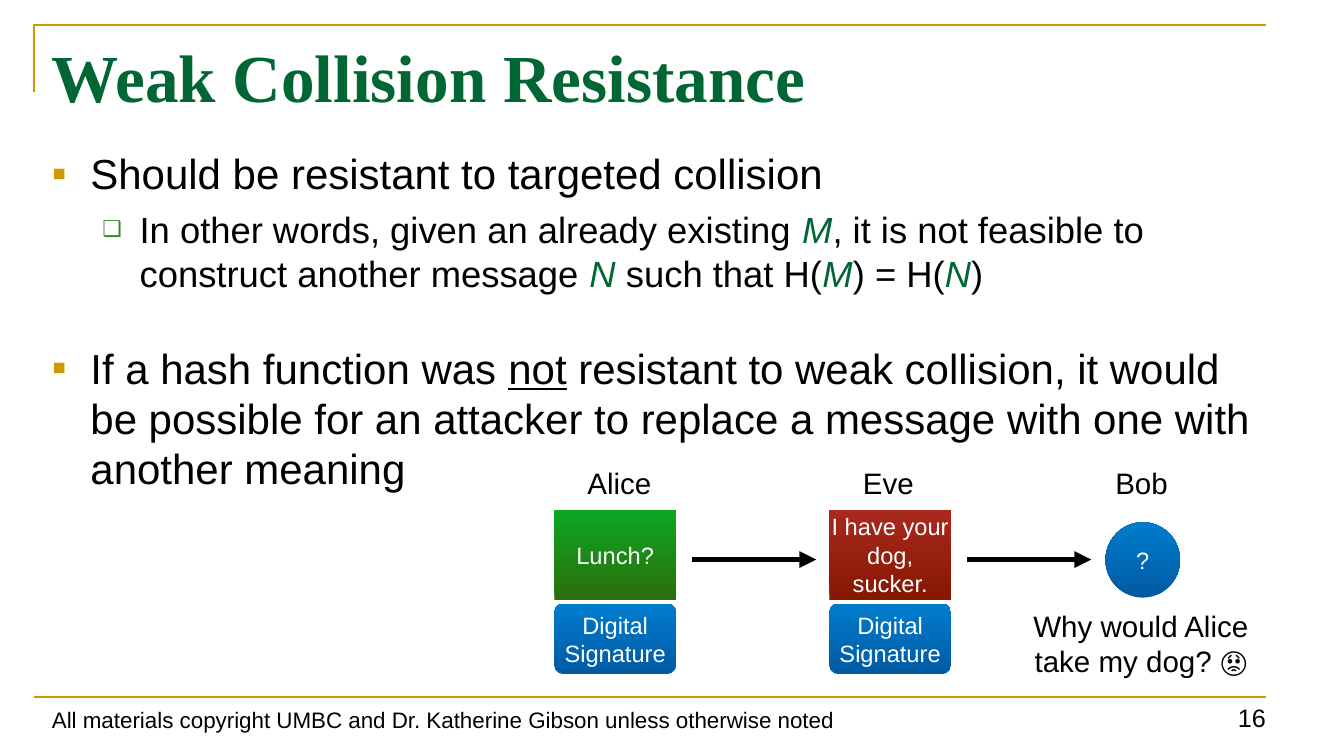
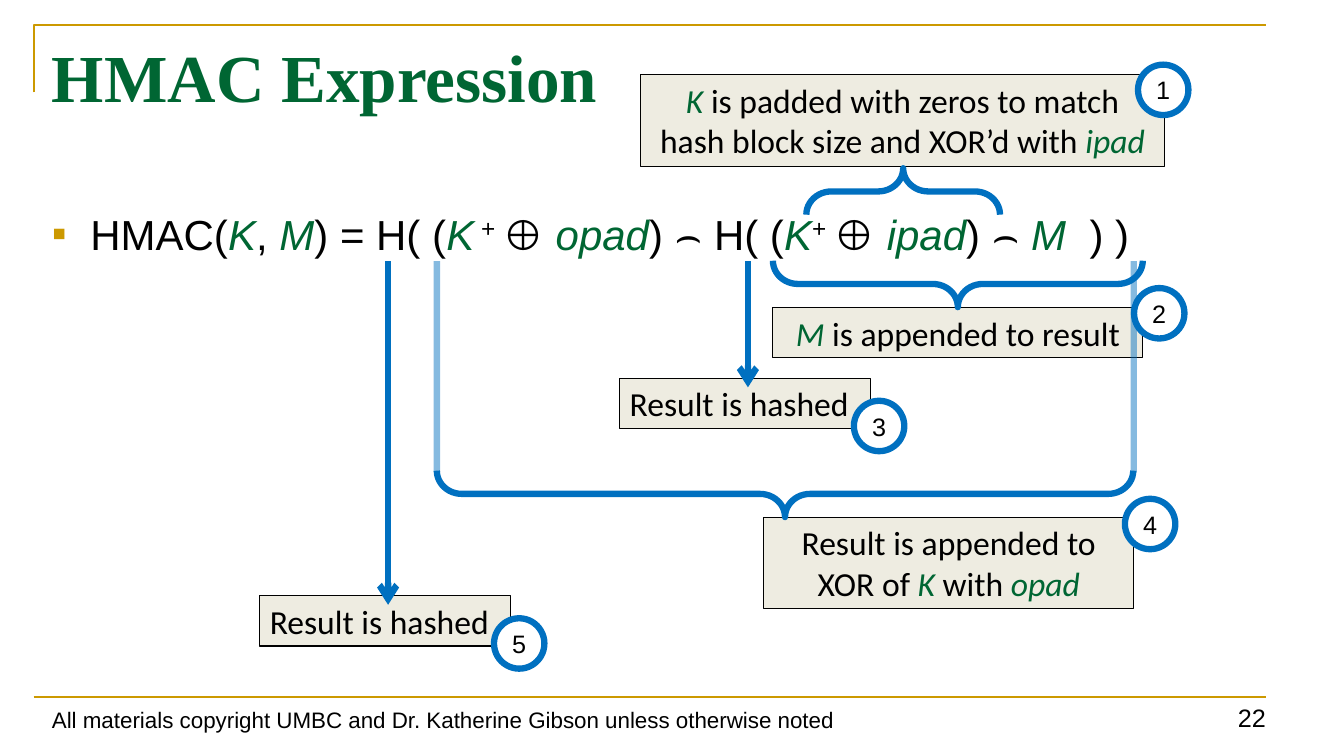
from lxml.etree import SubElement
from pptx import Presentation
from pptx.dml.color import RGBColor
from pptx.enum.shapes import MSO_CONNECTOR, MSO_SHAPE
from pptx.enum.text import MSO_ANCHOR, PP_ALIGN
from pptx.oxml.ns import qn
from pptx.util import Cm, Pt

GOLD = RGBColor(0xCC, 0x99, 0x00)
GREEN = RGBColor(0x00, 0x66, 0x33)
BULLET_GREEN = RGBColor(0x3B, 0x81, 0x2F)
BLUE = RGBColor(0x00, 0x70, 0xC0)
CREAM = RGBColor(0xEE, 0xEC, 0xE1)
BLACK = RGBColor(0x00, 0x00, 0x00)
WHITE = RGBColor(0xFF, 0xFF, 0xFF)

# Gradients run from the bottom colour to the top colour
GREEN_GRADIENT = (RGBColor(0x2B, 0x6E, 0x0B), RGBColor(0x0C, 0xA7, 0x22))
RED_GRADIENT = (RGBColor(0x87, 0x17, 0x02), RGBColor(0xA9, 0x28, 0x1D))
BLUE_GRADIENT = (RGBColor(0x01, 0x5A, 0xA4), RGBColor(0x00, 0x7C, 0xCD))

# Bullet levels: character, colour, size %, left margin, hanging indent, text size
BULLETS = (
    ("▪", GOLD, 100, 0.97, 0.97, 30),
    ("❑", BULLET_GREEN, 60, 2.21, 0.94, 26),
)
FOOTER = "All materials copyright UMBC and Dr. Katherine Gibson unless otherwise noted"


def variable(text):
    return text, "variable"


def underlined(text):
    return text, "underline"


def superscript(text):
    return text, "superscript"


class Deck:
    """Holds the presentation, its style and the slide being filled; lengths are in cm."""

    def __init__(self):
        self.presentation = Presentation()
        self.presentation.slide_width = Cm(33.87)
        self.presentation.slide_height = Cm(19.05)
        self.slide = None

    def new_slide(self, title, number):
        layout = self.presentation.slide_layouts.get_by_name("Title Only")
        self.slide = self.presentation.slides.add_slide(layout)
        self.frame()
        self.text(1.06, 17.35, 26.25, 1.24, [[FOOTER]], 16,
                  align=PP_ALIGN.LEFT, anchor=MSO_ANCHOR.BOTTOM)
        self.text(28.5, 17.35, 3.65, 1.24, [[number]], 18,
                  align=PP_ALIGN.RIGHT, anchor=MSO_ANCHOR.BOTTOM)
        placeholder = self.slide.shapes.title
        placeholder.left, placeholder.top = Cm(1.06), Cm(0.77)
        placeholder.width, placeholder.height = Cm(31.08), Cm(2.82)
        self.fill_text(placeholder, [[title]], 48, GREEN, "Times New Roman",
                       PP_ALIGN.LEFT, MSO_ANCHOR.TOP)
        placeholder.text_frame.paragraphs[0].font.bold = True

    def frame(self):
        """Draw the gold corner above the title and the rule above the footer."""
        builder = self.slide.shapes.build_freeform(Cm(0.85), Cm(2.33))
        builder.add_line_segments(
            [(Cm(0.85), Cm(0.64)), (Cm(31.9), Cm(0.64))], close=False)
        corner = builder.convert_to_shape()
        corner.shadow.inherit = False
        corner.fill.background()
        self.outline(corner, GOLD, 1.5)
        self.line(0.85, 17.57, 31.9, 17.57, GOLD, 1.5)

    @staticmethod
    def outline(shape, color, width):
        shape.line.color.rgb = color
        shape.line.width = Pt(width)

    @staticmethod
    def add_runs(paragraph, pieces):
        """Add plain strings and (text, style) pairs as runs."""
        for piece in pieces:
            text, style = (piece, None) if isinstance(piece, str) else piece
            run = paragraph.add_run()
            run.text = text
            if style == "variable":
                run.font.italic = True
                run.font.color.rgb = GREEN
            elif style == "underline":
                run.font.underline = True
            elif style == "superscript":
                run.font._element.set("baseline", "30000")

    @staticmethod
    def set_font(paragraph, size, color, name):
        paragraph.font.size = Pt(size)
        paragraph.font.color.rgb = color
        paragraph.font.name = name

    def fill_text(self, shape, paragraphs, size, color, font, align, anchor,
                  inset=(0.25, 0.13)):
        frame = shape.text_frame
        frame.word_wrap = True
        frame.vertical_anchor = anchor
        frame.margin_left = frame.margin_right = Cm(inset[0])
        frame.margin_top = frame.margin_bottom = Cm(inset[1])
        for index, pieces in enumerate(paragraphs):
            paragraph = frame.add_paragraph() if index else frame.paragraphs[0]
            paragraph.alignment = align
            self.add_runs(paragraph, pieces)
            self.set_font(paragraph, size, color, font)

    def text(self, left, top, width, height, paragraphs, size,
             align=PP_ALIGN.CENTER, anchor=MSO_ANCHOR.MIDDLE):
        box = self.slide.shapes.add_textbox(Cm(left), Cm(top), Cm(width), Cm(height))
        self.fill_text(box, paragraphs, size, BLACK, "Arial", align, anchor)

    def bullets(self, top, height, items):
        """Fill the body with (level, space before in points, pieces) items."""
        box = self.slide.shapes.add_textbox(Cm(1.06), Cm(top), Cm(31.08), Cm(height))
        frame = box.text_frame
        frame.word_wrap = True
        for index, (level, space, pieces) in enumerate(items):
            character, color, percent, margin, hanging, size = BULLETS[level]
            paragraph = frame.add_paragraph() if index else frame.paragraphs[0]
            paragraph.level = level
            if space:
                paragraph.space_before = Pt(space)
            properties = paragraph._p.get_or_add_pPr()
            properties.set("marL", str(Cm(margin)))
            properties.set("indent", str(-Cm(hanging)))
            bullet_color = SubElement(properties, qn("a:buClr"))
            SubElement(bullet_color, qn("a:srgbClr"), val=str(color))
            SubElement(properties, qn("a:buSzPct"), val=str(percent * 1000))
            SubElement(properties, qn("a:buFont"), typeface="Arial")
            SubElement(properties, qn("a:buChar"), char=character)
            self.add_runs(paragraph, pieces)
            self.set_font(paragraph, size, BLACK, "Arial")

    def shape(self, kind, left, top, width, height):
        shape = self.slide.shapes.add_shape(kind, Cm(left), Cm(top), Cm(width), Cm(height))
        shape.shadow.inherit = False
        return shape

    def gradient_block(self, kind, left, top, width, height, text, gradient):
        block = self.shape(kind, left, top, width, height)
        if kind == MSO_SHAPE.ROUNDED_RECTANGLE:
            block.adjustments[0] = 0.13
        block.fill.gradient()
        block.fill.gradient_angle = 90
        for stop, color in zip(block.fill.gradient_stops, gradient):
            stop.color.rgb = color
        block.line.fill.background()
        self.fill_text(block, [[text]], 16.9, WHITE, "Arial",
                       PP_ALIGN.CENTER, MSO_ANCHOR.MIDDLE, (0, 0))

    def note(self, left, top, width, height, pieces, align=PP_ALIGN.CENTER):
        note = self.shape(MSO_SHAPE.RECTANGLE, left, top, width, height)
        note.fill.solid()
        note.fill.fore_color.rgb = CREAM
        self.outline(note, BLACK, 0.75)
        self.fill_text(note, [pieces], 24, BLACK, "Calibri", align, MSO_ANCHOR.TOP)

    def badge(self, left, top, number):
        badge = self.shape(MSO_SHAPE.OVAL, left, top, 1.27, 1.27)
        badge.fill.solid()
        badge.fill.fore_color.rgb = WHITE
        self.outline(badge, BLUE, 4.5)
        self.fill_text(badge, [[number]], 18, BLACK, "Arial",
                       PP_ALIGN.CENTER, MSO_ANCHOR.MIDDLE, (0, 0))

    def brace(self, left, top, width, rotation):
        """Lay a brace on its side; left, top and width are those seen after turning."""
        depth = 1.17
        shift = (width - depth) / 2
        brace = self.shape(MSO_SHAPE.LEFT_BRACE, left + shift, top - shift, depth, width)
        brace.rotation = rotation
        brace.adjustments[0] = 0.54
        brace.adjustments[1] = 0.5
        brace.fill.background()
        self.outline(brace, BLUE, 4.5)

    def line(self, x1, y1, x2, y2, color, width, head=None, opacity=None):
        connector = self.slide.shapes.add_connector(
            MSO_CONNECTOR.STRAIGHT, Cm(x1), Cm(y1), Cm(x2), Cm(y2))
        self.outline(connector, color, width)
        line = connector.line._get_or_add_ln()
        if opacity:
            SubElement(line.find(".//" + qn("a:srgbClr")), qn("a:alpha"),
                       val=str(opacity * 1000))
        if head:
            SubElement(line, qn("a:tailEnd"), type=head)
        SubElement(connector._element.spPr, qn("a:effectLst"))


def weak_collision_slide(deck):
    deck.new_slide("Weak Collision Resistance", "16")
    deck.bullets(3.6, 13.41, [
        (0, 0, ["Should be resistant to targeted collision"]),
        (1, 6.5, ["In other words, given an already existing ", variable("M"),
                  ", it is not feasible to construct another message ", variable("N "),
                  "such that H(", variable("M"), ") = H(", variable("N"), ")"]),
        (0, 34, ["If a hash function was ", underlined("not"),
                 " resistant to weak collision, it would be possible for an attacker "
                 "to replace a message with one with another meaning"]),
    ])
    messages = (
        (13.97, "Lunch?", GREEN_GRADIENT),
        (20.9, "I have your dog, sucker.", RED_GRADIENT),
    )
    for left, message, gradient in messages:
        deck.gradient_block(MSO_SHAPE.RECTANGLE, left, 12.85, 3.07, 2.26, message, gradient)
        deck.gradient_block(MSO_SHAPE.ROUNDED_RECTANGLE, left, 15.21, 3.07, 1.78,
                            "Digital Signature", BLUE_GRADIENT)
        deck.line(left + 3.48, 14.1, left + 6.6, 14.1, BLACK, 4, "triangle")
    deck.gradient_block(MSO_SHAPE.OVAL, 27.86, 13.16, 1.88, 1.9, "?", BLUE_GRADIENT)
    for center, name in ((15.61, "Alice"), (22.39, "Eve"), (28.77, "Bob")):
        deck.text(center - 1.25, 11.63, 2.5, 1.09, [[name]], 21.1)
    deck.text(25.53, 15.21, 6.45, 2.01, [["Why would Alice"], ["take my dog? 😟"]], 21.1)


def hmac_slide(deck):
    deck.new_slide("HMAC Expression", "22")
    deck.bullets(5.12, 11.89, [
        (0, 0, ["HMAC(", variable("K"), ", ", variable("M"), ") = H( (", variable("K"),
                superscript(" + "), "⊕ ", variable("opad"), ") ⌢ H( (", variable("K"),
                superscript("+ "), "⊕ ", variable("ipad"), ") ⌢ ", variable("M  "), ") )"]),
    ])
    line_top = 6.58

    deck.note(16.13, 1.88, 13.23, 2.31, [
        variable("K"), " is padded with zeros to match hash block size and XOR’d with ",
        variable("ipad")])
    deck.brace(20.32, 4.24, 4.88, 90)
    deck.badge(28.68, 1.63, "1")

    deck.note(19.25, 13.03, 9.32, 2.31, [
        "Result is appended to XOR of ", variable("K"), " with ", variable("opad")])
    deck.brace(11.01, 11.86, 17.55, 270)
    deck.badge(28.35, 12.57, "4")

    deck.note(19.48, 7.75, 9.32, 1.27, [variable("M"), " is appended to result"])
    deck.brace(19.48, 6.57, 9.32, 270)
    for x in (11.01, 28.57):
        deck.line(x, 11.9, x, line_top, BLUE, 4.5, opacity=48)
    deck.badge(28.58, 7.26, "2")

    for left, top, number in ((15.62, 9.53, "3"), (6.55, 15.01, "5")):
        deck.note(left, top, 6.32, 1.27, ["Result is hashed"], PP_ALIGN.LEFT)
        deck.line(left + 3.23, line_top, left + 3.23, top + 0.23, BLUE, 4.5, "arrow")
        deck.badge(left + 5.9, top + 0.57, number)


def main():
    deck = Deck()
    weak_collision_slide(deck)
    hmac_slide(deck)
    deck.presentation.save("out.pptx")


if __name__ == "__main__":
    main()
